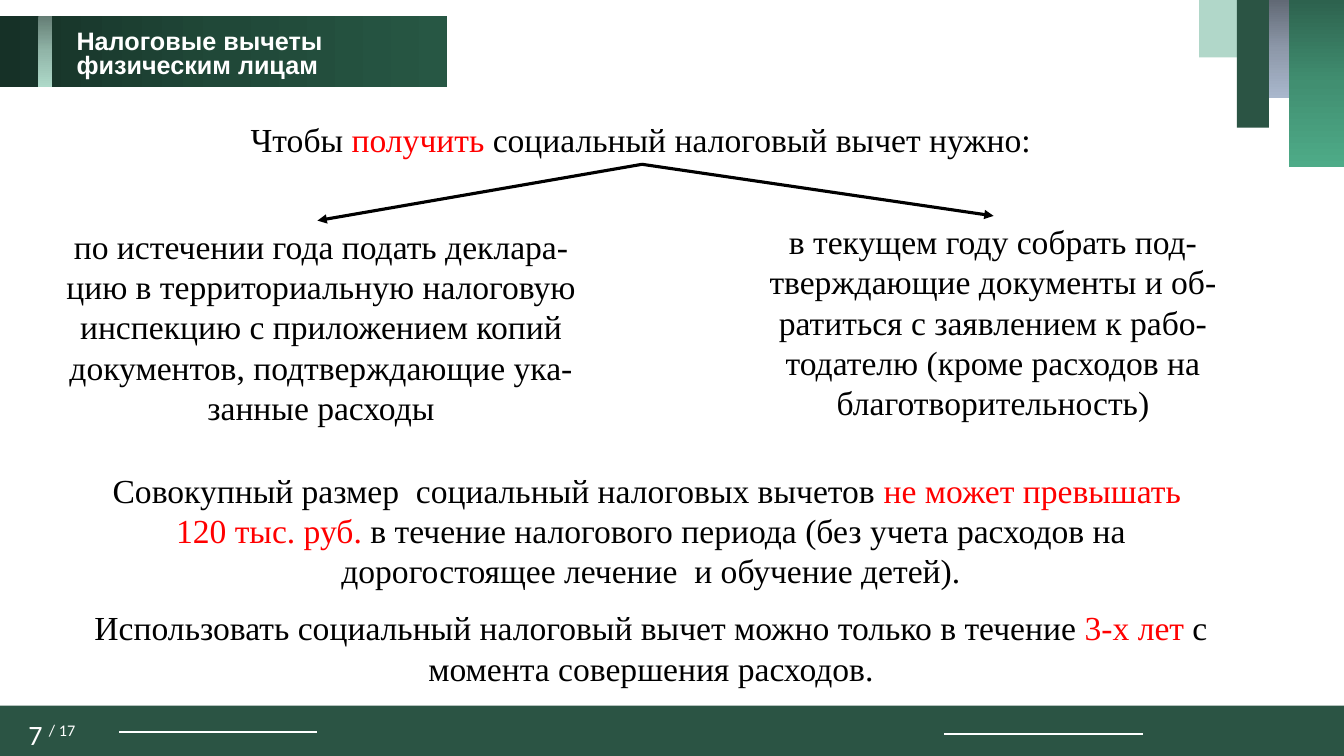
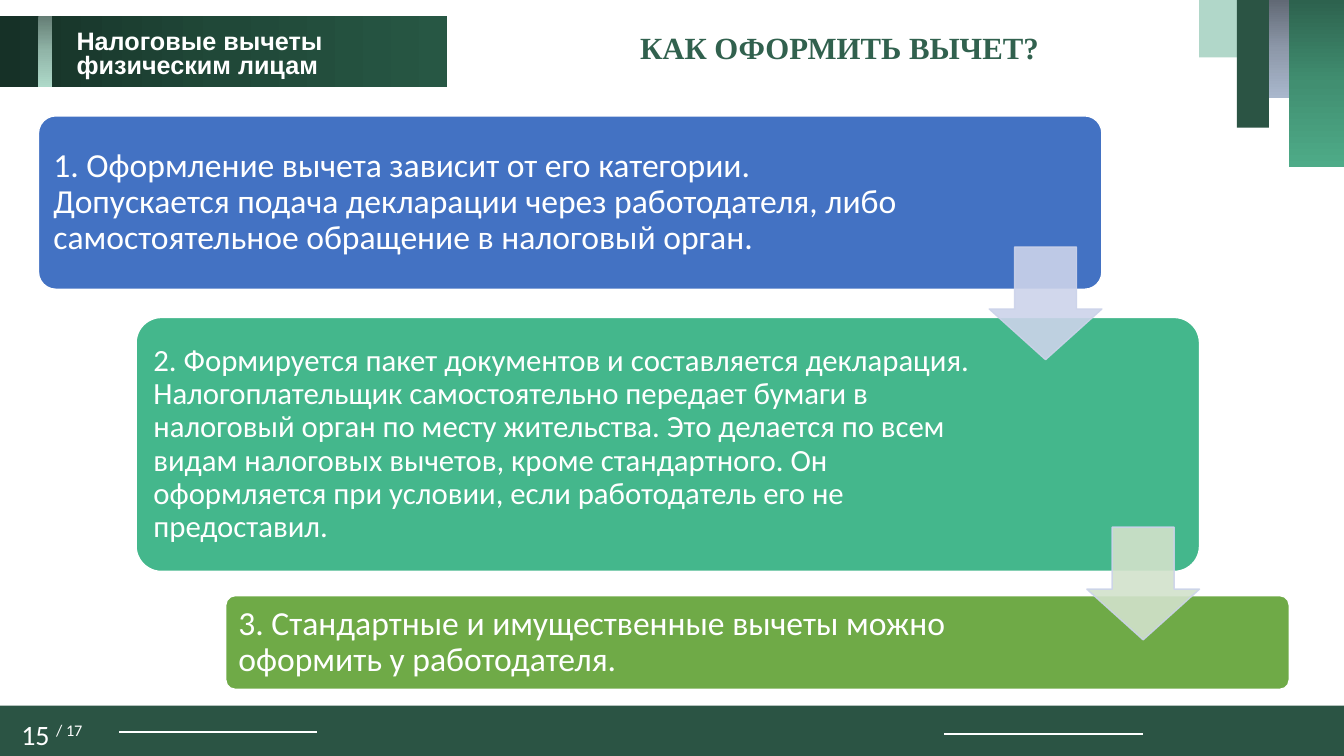
from copy import deepcopy

from lxml.etree import SubElement
from pptx import Presentation
from pptx.dml.color import RGBColor
from pptx.enum.shapes import MSO_CONNECTOR as Connector, MSO_SHAPE as Preset
from pptx.enum.text import MSO_ANCHOR as Anchor, PP_ALIGN as Align
from pptx.oxml.ns import qn
from pptx.util import Cm, Pt

WIDTH, HEIGHT = 33.87, 19.05
PAGE_COUNT = 17
SERIF, SANS, TITLE_FONT = "Times New Roman", "Calibri", "Arial"

COLORS = {
    "white": "FFFFFF",
    "black": "000000",
    "red": "FF0000",
    "green": "2B5444",
    "mint": "B1D7C9",
    "heading": "31614E",
    "step_blue": "4372C3",
    "step_teal": "44B78C",
    "step_lime": "6FAA47",
    "arrow_blue": "CCD3EA",
    "arrow_lime": "D2E2CB",
}
# Three stops each, at 0, 50 and 100 percent
GRADIENTS = {
    "steel": ("616975", "8D98A9", "A9B7CC"),
    "emerald": ("2D624E", "418F71", "4EAB88"),
    "forest": ("163127", "204838", "275744"),
    "sage": ("647D74", "91B5A8", "AED9C9"),
}


def rgb(name):
    return RGBColor.from_string(COLORS[name])


# Kinds of element
def add_box(page, preset, left, top, width, height, color, outline=None):
    box = page.shapes.add_shape(preset, Cm(left), Cm(top), Cm(width), Cm(height))
    box.shadow.inherit = False
    if color in GRADIENTS:
        fill_gradient(box, GRADIENTS[color])
    else:
        box.fill.solid()
        box.fill.fore_color.rgb = rgb(color)
    if outline:
        box.line.color.rgb = rgb(outline)
        box.line.width = Pt(1)
    else:
        box.line.fill.background()
    return box


def fill_gradient(box, stops):
    """Three-stop gradient: along wide boxes, down tall ones."""
    box.fill.gradient()
    box.fill.gradient_angle = 0 if box.width > box.height else 270
    stop_list = box._element.spPr.find(".//" + qn("a:gsLst"))
    stop_list.append(deepcopy(stop_list[0]))
    for index, stop in enumerate(box.fill.gradient_stops):
        stop.color.rgb = RGBColor.from_string(stops[index])
        stop.position = index / 2


def set_opacity(box, percent):
    for color in box._element.spPr.iter(qn("a:srgbClr")):
        SubElement(color, qn("a:alpha")).set("val", str(percent * 1000))


def add_line(page, start, end, color, width, arrow=False):
    line = page.shapes.add_connector(
        Connector.STRAIGHT, *(Cm(value) for value in start + end))
    line.line.color.rgb = rgb(color)
    line.line.width = Pt(width)
    properties = line._element.spPr
    if arrow:
        SubElement(properties.find(qn("a:ln")), qn("a:tailEnd")).set("type", "triangle")
    SubElement(properties, qn("a:effectLst"))


def write(frame, paras, font, size, color, bold=False, align=Align.LEFT,
          spacing=None, gap=0):
    """Each paragraph is a list of spans: a string, or (string, colour name)."""
    frame.word_wrap = True
    for index, spans in enumerate(paras):
        para = frame.add_paragraph() if index else frame.paragraphs[0]
        para.alignment = align
        if spacing:
            para.line_spacing = spacing
        if index:
            para.space_before = Pt(gap)
        for item in spans:
            text, span_color = (item, color) if isinstance(item, str) else item
            for number, piece in enumerate(text.split("\n")):
                if number:
                    para.add_line_break()
                span = para.add_run()
                span.text = piece
                span.font.name = font
                span.font.size = Pt(size)
                span.font.bold = bold
                span.font.color.rgb = rgb(span_color)


def add_text(page, left, top, width, height, paras, font, size, color, **style):
    box = page.shapes.add_textbox(Cm(left), Cm(top), Cm(width), Cm(height))
    write(box.text_frame, paras, font, size, color, **style)
    return box


def add_body(page, left, top, width, height, *paras):
    add_text(page, left, top, width, height, paras, SERIF, 24, "black",
             align=Align.CENTER, gap=12)


# What the slides share
def add_page(deck, number):
    page = deck.slides.add_slide(deck.slide_layouts[6])

    # Footer band with page number
    add_box(page, Preset.RECTANGLE, 0, 17.78, WIDTH, HEIGHT - 17.78, "green")
    for left, top in ((3, 18.44), (23.8, 18.49)):
        add_line(page, (left, top), (left + 5, top), "white", 1.5)
    label = add_text(page, 0, 18.11, 2.62, 0.94, [[f"{number} ", f"/ {PAGE_COUNT}"]],
                     SANS, 20, "white", align=Align.CENTER, spacing=0.8)
    total = label.text_frame.paragraphs[0].runs[1]
    total._r.get_or_add_rPr().set("baseline", "30000")

    # Corner bars
    for left, width, height, color in (
        (31.98, 0.51, 2.46, "steel"),
        (32.48, 1.39, 4.21, "emerald"),
        (30.22, 0.96, 1.45, "mint"),
        (31.17, 0.81, 3.22, "green"),
    ):
        add_box(page, Preset.RECTANGLE, left, 0, width, height, color)

    # Title band
    add_box(page, Preset.RECTANGLE, 0, 0.4, 11.26, 1.8, "forest")
    add_box(page, Preset.RECTANGLE, 0.97, 0.4, 0.35, 1.8, "sage")
    add_text(page, 1.68, 0.66, 6.96, 1.5, [["Налоговые вычеты \nфизическим лицам"]],
             TITLE_FONT, 18, "white", bold=True, spacing=0.8)
    return page


def add_conditions(deck):
    page = add_page(deck, 7)

    # Question and its two branches
    add_body(page, 1.65, 2.87, 29, 1.27,
             ["Чтобы ", ("получить", "red"), " социальный налоговый вычет нужно:"])
    add_body(page, 1.32, 5.56, 13.54, 5.38, [
        "по истечении года подать деклара-цию в территориальную налоговую "
        "инспекцию с приложением копий документов, подтверждающие ука-занные расходы"])
    add_body(page, 18.75, 5.44, 12.55, 5.38, [
        "в текущем году собрать под-тверждающие документы и об-ратиться "
        "с заявлением к рабо-тодателю (кроме расходов на благотворительность)"])
    for end in ((8, 5.56), (25.04, 5.44)):
        add_line(page, (16.18, 4.14), end, "black", 2.25, arrow=True)

    # Limits
    add_body(
        page, 1.65, 11.71, 29.51, 5.82,
        ["Совокупный размер  социальный налоговых вычетов ",
         ("не может превышать \n120 тыс. руб. ", "red"),
         "в течение налогового периода (без учета расходов на "
         "дорогостоящее лечение  и обучение детей)."],
        ["Использовать социальный налоговый вычет можно только в течение ",
         ("3-х лет ", "red"), "с момента совершения расходов."])


def add_steps(deck):
    page = add_page(deck, 15)
    add_text(page, 15.88, 0.61, 10.67, 1.19, [["КАК ОФОРМИТЬ ВЫЧЕТ?"]],
             SERIF, 22, "heading", bold=True)

    # Steps: left, top, height, right margin, colour, text size, text
    step_width, arrow_size = 26.8, 2.84
    steps = (
        (0.97, 2.92, 4.37, 4.7, "step_blue", 24,
         "1. Оформление вычета зависит от его категории. Допускается подача "
         "декларации через работодателя, либо самостоятельное обращение "
         "в налоговый орган."),
        (3.43, 8, 6.4, 5.4, "step_teal", 22,
         "2. Формируется пакет документов и составляется декларация. "
         "Налогоплательщик самостоятельно передает бумаги в налоговый орган "
         "по месту жительства. Это делается по всем видам налоговых вычетов, "
         "кроме стандартного. Он оформляется при условии, если работодатель "
         "его не предоставил."),
        (5.69, 15.01, 2.36, 5.4, "step_lime", 24,
         "3. Стандартные и имущественные вычеты можно оформить у работодателя."),
    )
    for left, top, height, margin, color, size, text in steps:
        box = add_box(page, Preset.ROUNDED_RECTANGLE, left, top, step_width, height,
                      color, "white")
        box.adjustments[0] = 0.1
        frame = box.text_frame
        frame.margin_left, frame.margin_right = Cm(0.25), Cm(margin)
        frame.vertical_anchor = Anchor.MIDDLE
        write(frame, [[text]], SANS, size, "white", spacing=0.9)

    # Arrows sit on the right edge, centred on the gap to the next step
    for step, following, color in zip(steps, steps[1:], ("arrow_blue", "arrow_lime")):
        left, top, height = step[:3]
        middle = (top + height + following[1]) / 2
        arrow = add_box(page, Preset.DOWN_ARROW, left + step_width - arrow_size,
                        middle - arrow_size / 2, arrow_size, arrow_size,
                        color, "arrow_blue")
        arrow.adjustments[0], arrow.adjustments[1] = 0.45, 0.55
        # Order of the preset: head length, then shaft width
        arrow.adjustments[0], arrow.adjustments[1] = 0.55, 0.45
        set_opacity(arrow, 90)


def main():
    deck = Presentation()
    deck.slide_width, deck.slide_height = Cm(WIDTH), Cm(HEIGHT)
    add_conditions(deck)
    add_steps(deck)
    deck.save("out.pptx")


if __name__ == "__main__":
    main()
